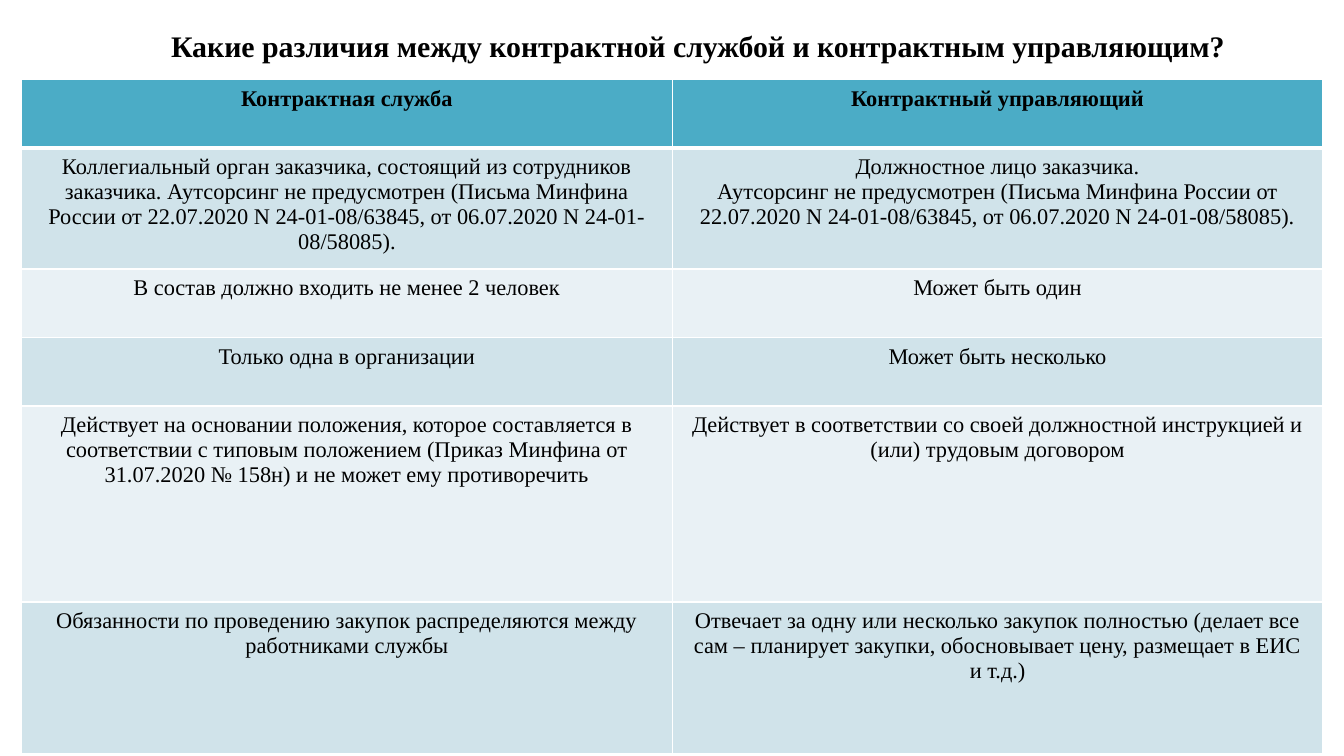
from pptx import Presentation
from pptx.dml.color import RGBColor
from pptx.enum.text import MSO_AUTO_SIZE, PP_ALIGN
from pptx.oxml.ns import qn
from pptx.util import Pt
from lxml.etree import SubElement

BLACK = RGBColor(0x00, 0x00, 0x00)
WHITE = RGBColor(0xFF, 0xFF, 0xFF)
TEAL = RGBColor(0x4B, 0xAC, 0xC6)
BLUE_BAND = RGBColor(0xD0, 0xE3, 0xEA)
PALE_BAND = RGBColor(0xE9, 0xF1, 0xF5)

COLUMN_WIDTH = 348.6
ROW_HEIGHTS = [36.7, 64, 36.7, 36.7, 105.1, 81.4]
ROWS = [
    ("Контрактная служба", "Контрактный управляющий"),
    ("Коллегиальный орган заказчика, состоящий из сотрудников заказчика. "
     "Аутсорсинг не предусмотрен (Письма Минфина России от 22.07.2020 "
     "N 24-01-08/63845, от 06.07.2020 N 24-01-08/58085).",
     "Должностное лицо заказчика.\n"
     "Аутсорсинг не предусмотрен (Письма Минфина России от 22.07.2020 "
     "N 24-01-08/63845, от 06.07.2020 N 24-01-08/58085)."),
    ("В состав должно входить не менее 2 человек", "Может быть один"),
    ("Только одна в организации", "Может быть несколько"),
    ("Действует на основании положения, которое составляется в соответствии "
     "с типовым положением (Приказ Минфина от 31.07.2020 № 158н) "
     "и не может ему противоречить",
     "Действует в соответствии со своей должностной инструкцией "
     "и (или) трудовым договором"),
    ("Обязанности по проведению закупок распределяются между "
     "работниками службы",
     "Отвечает за одну или несколько закупок полностью (делает все сам – "
     "планирует закупки, обосновывает цену, размещает в ЕИС и т.д.)"),
]


def write_text(text_frame, text, size, bold):
    text_frame.text = text
    font_format = {"name": "Times New Roman", "size": Pt(size), "bold": bold}
    for paragraph in text_frame.paragraphs:
        paragraph.alignment = PP_ALIGN.CENTER
        for run in paragraph.runs:
            for attribute, value in font_format.items():
                setattr(run.font, attribute, value)
            run.font.color.rgb = BLACK


def add_borders(cell, widths):
    properties = cell._tc.get_or_add_tcPr()
    for side, width in widths.items():
        line = SubElement(properties, qn(f"a:ln{side}"), w=str(Pt(width)))
        fill = SubElement(line, qn("a:solidFill"))
        SubElement(fill, qn("a:srgbClr"), val=str(WHITE))


presentation = Presentation()
presentation.slide_width = Pt(720)
presentation.slide_height = Pt(405)
slide = presentation.slides.add_slide(presentation.slide_layouts[6])

title = slide.shapes.add_textbox(Pt(62), Pt(11.5), Pt(624), Pt(26.6))
title.text_frame.word_wrap = True
title.text_frame.auto_size = MSO_AUTO_SIZE.SHAPE_TO_FIT_TEXT
write_text(
    title.text_frame,
    "Какие различия между контрактной службой и контрактным управляющим?",
    16, True)

table = slide.shapes.add_table(
    len(ROWS), 2, Pt(11.6), Pt(42.6),
    Pt(2 * COLUMN_WIDTH), Pt(sum(ROW_HEIGHTS))).table
for column in table.columns:
    column.width = Pt(COLUMN_WIDTH)

for row_index, (texts, height) in enumerate(zip(ROWS, ROW_HEIGHTS)):
    table.rows[row_index].height = Pt(height)
    is_header = row_index == 0
    band = BLUE_BAND if row_index % 2 else PALE_BAND
    for column_index, text in enumerate(texts):
        cell = table.cell(row_index, column_index)
        write_text(cell.text_frame, text, 12, is_header)
        add_borders(cell, {"L": 1, "R": 1, "T": 3 if row_index == 1 else 1,
                           "B": 3 if is_header else 1})
        cell.fill.solid()
        cell.fill.fore_color.rgb = TEAL if is_header else band

presentation.save("out.pptx")
